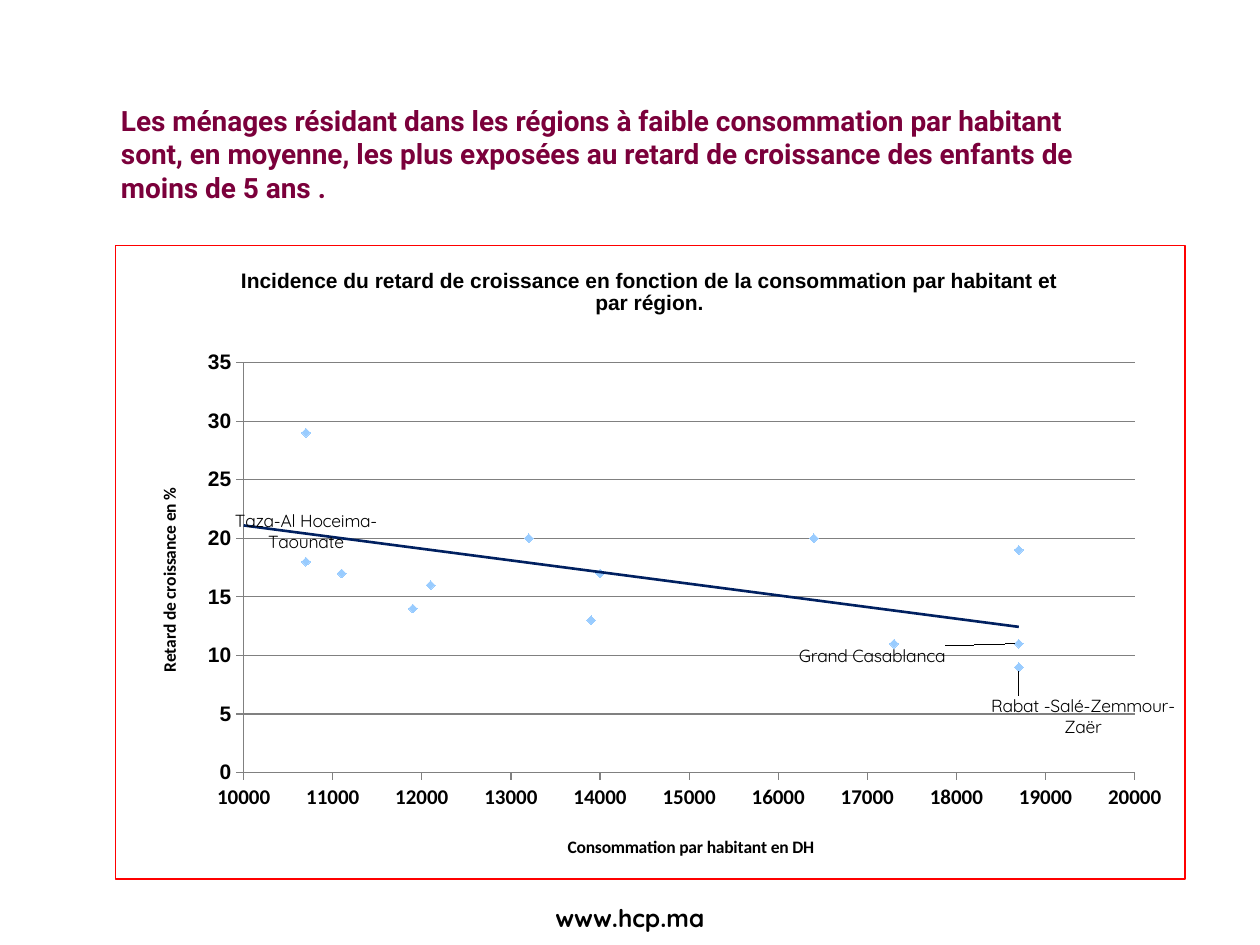
from lxml import etree
from pptx import Presentation
from pptx.chart.data import XyChartData
from pptx.dml.color import RGBColor
from pptx.enum.chart import XL_CHART_TYPE, XL_LABEL_POSITION, XL_MARKER_STYLE, XL_TICK_MARK
from pptx.enum.text import MSO_ANCHOR, PP_ALIGN
from pptx.oxml import parse_xml
from pptx.oxml.ns import qn
from pptx.util import Inches, Pt

SCATTER = XL_CHART_TYPE.XY_SCATTER
DIAMOND = XL_MARKER_STYLE.DIAMOND
OUTSIDE = XL_TICK_MARK.OUTSIDE
ABOVE, BELOW, LEFT = XL_LABEL_POSITION.ABOVE, XL_LABEL_POSITION.BELOW, XL_LABEL_POSITION.LEFT
CENTER, MIDDLE, PP_LEFT = PP_ALIGN.CENTER, MSO_ANCHOR.MIDDLE, PP_ALIGN.LEFT
NAMESPACES = ('xmlns:c="http://schemas.openxmlformats.org/drawingml/2006/chart" '
              'xmlns:a="http://schemas.openxmlformats.org/drawingml/2006/main"')
NO_LEADER_LINES = (
    f'<c:extLst {NAMESPACES}><c:ext uri="{{CE6537A1-D6FC-4f65-9D91-7224C49458BB}}" '
    'xmlns:c15="http://schemas.microsoft.com/office/drawing/2012/chart">'
    '<c15:showLeaderLines val="0"/></c:ext></c:extLst>')

CONSUMPTION = [9200, 10700, 10700, 11100, 11900, 12100, 13200,
               13900, 14000, 16400, 17300, 18700, 18700, 18700]
STUNTING = [25, 29, 18, 17, 14, 16, 20, 13, 17, 20, 11, 11, 19, 9]
# point index: (region, side, horizontal shift, vertical shift)
REGIONS = {
    2: ("Taza-Al Hoceima-Taounate", ABOVE, 0, 0),
    11: ("Grand Casablanca", LEFT, -0.06, 0.02),
    13: ("Rabat -Salé-Zemmour-Zaër", BELOW, 0.06, 0.03),
}


def color(value):
    return RGBColor.from_string(value)


def set_font(font, name, size, bold=False, fill="000000"):
    font.name, font.size, font.bold = name, Pt(size), bold
    font.color.rgb = color(fill)


def line_xml(fill, width):
    return (f'<a:ln w="{Pt(width)}"><a:solidFill><a:srgbClr val="{fill}"/>'
            '</a:solidFill></a:ln>')


def layout(left, top, width=None, height=None, edge=True):
    """Manual chart layout, as shares of the chart's size."""
    root = parse_xml(f"<c:layout {NAMESPACES}><c:manualLayout/></c:layout>")
    entries = [("layoutTarget", "inner")] if width else []
    if edge:
        entries += [("xMode", "edge"), ("yMode", "edge")]
    entries += [("x", left), ("y", top)]
    if width:
        entries += [("w", width), ("h", height)]
    for tag, value in entries:
        etree.SubElement(root[0], qn(f"c:{tag}")).set("val", str(value))
    return root


class SlideBuilder:
    def __init__(self, presentation):
        self.presentation = presentation
        self.slide = presentation.slides.add_slide(presentation.slide_layouts[5])

    def box(self, left, top, width, height):
        """Turn shares of the slide's size into lengths."""
        across, down = self.presentation.slide_width, self.presentation.slide_height
        return int(left * across), int(top * down), int(width * across), int(height * down)

    def title(self, text, *shares):
        shape = self.slide.shapes.title
        shape.left, shape.top, shape.width, shape.height = self.box(*shares)
        frame = shape.text_frame
        frame.text, frame.word_wrap, frame.vertical_anchor = text, True, MIDDLE
        paragraph = frame.paragraphs[0]
        paragraph.alignment = PP_LEFT
        set_font(paragraph.font, "Roboto", 16, True, "7B003B")

    def footer(self, text, *shares):
        frame = self.slide.shapes.add_textbox(*self.box(*shares)).text_frame
        frame.text, frame.word_wrap = text, True
        paragraph = frame.paragraphs[0]
        paragraph.alignment = CENTER
        set_font(paragraph.font, "Quicksand", 14, True)

    def scatter(self, *shares):
        data = XyChartData()
        series = data.add_series("Series 1")
        for point in zip(CONSUMPTION, STUNTING):
            series.add_data_point(*point)
        chart = self.slide.shapes.add_chart(SCATTER, *self.box(*shares), data).chart
        chart.has_legend = False
        set_font(chart.font, "Quicksand", 10)
        chart.plots[0].vary_by_categories = False
        return chart

    def chart_title(self, title, text, name, size, left, top):
        title.text_frame.text = text
        set_font(title.text_frame.paragraphs[0].font, name, size, True)
        element = title._element
        for old in element.findall(qn("c:layout")):
            element.remove(old)
        element.find(qn("c:tx")).addnext(layout(left, top))

    def axis(self, axis, name, low, high, step, grid):
        axis.minimum_scale, axis.maximum_scale, axis.major_unit = low, high, step
        axis.major_tick_mark = OUTSIDE
        axis.has_major_gridlines = grid
        lines = [axis.format.line] + ([axis.major_gridlines.format.line] if grid else [])
        for line in lines:
            line.color.rgb, line.width = color("808080"), Pt(0.75)
        axis.tick_labels.number_format = "General"
        axis.tick_labels.number_format_is_linked = False
        set_font(axis.tick_labels.font, name, 12, True)

    def region_label(self, series, index, text, side, right, down):
        label = series.points[index].data_label
        label.text_frame.text = text
        set_font(label.text_frame.paragraphs[0].font, "Quicksand", 10)
        label.position = side
        label._dLbl.find(qn("c:idx")).addnext(layout(right, down, edge=False))


def build():
    presentation = Presentation()
    presentation.slide_width, presentation.slide_height = Inches(10), Inches(7.5)
    builder = SlideBuilder(presentation)

    # Heading and web address
    builder.title("Les ménages résidant dans les régions à faible consommation par habitant "
                  "sont, en moyenne, les plus exposées au retard de croissance des enfants "
                  "de moins de 5 ans .", 0.086, 0.104, 0.82, 0.117)
    builder.footer("www.hcp.ma", 0.382, 0.949, 0.236, 0.044)

    # Chart frame and plot area
    chart = builder.scatter(0.091, 0.259, 0.85, 0.672)
    chart_element = chart._chartSpace.find(qn("c:chart"))
    chart_element.addnext(parse_xml(
        f'<c:spPr {NAMESPACES}><a:noFill/>{line_xml("FF0000", 0.75)}</c:spPr>'))
    plot_area = chart_element.find(qn("c:plotArea"))
    for old in plot_area.findall(qn("c:layout")):
        plot_area.remove(old)
    plot_area.insert(0, layout(0.12, 0.185, 0.833, 0.647))

    # Titles and axes
    horizontal, vertical = chart.category_axis, chart.value_axis
    builder.chart_title(
        chart.chart_title, "Incidence du retard de croissance en fonction de la "
        "consommation par habitant et par région.", "Arial", 12, 0.114, 0.029)
    chart.chart_title._element.find(qn("c:overlay")).set("val", "1")
    builder.axis(horizontal, "Calibri", 10000, 20000, 1000, False)
    builder.axis(vertical, "Arial", 0, 35, 5, True)
    builder.chart_title(horizontal.axis_title, "Consommation par habitant en DH",
                        "Calibri", 10, 0.42, 0.927)
    builder.chart_title(vertical.axis_title, "Retard de croissance en %",
                        "Calibri", 10, 0.037, 0.378)
    vertical.axis_title.text_frame._txBody.find(qn("a:bodyPr")).set("rot", "-5400000")

    # Regions as points, with names and a linear trend
    series = chart.plots[0].series[0]
    series.format.line.fill.background()
    marker = series.marker
    marker.style, marker.size = DIAMOND, 5
    marker.format.fill.solid()
    marker.format.fill.fore_color.rgb = color("99CCFF")
    marker.format.line.color.rgb = color("99CCFF")
    for index, region in REGIONS.items():
        builder.region_label(series, index, *region)
    labels = series._element.find(qn("c:dLbls"))
    labels.find(qn("c:showVal")).set("val", "0")
    labels.append(parse_xml(NO_LEADER_LINES))
    labels.addnext(parse_xml(
        f'<c:trendline {NAMESPACES}><c:spPr>{line_xml("002060", 1.5)}</c:spPr>'
        '<c:trendlineType val="linear"/><c:dispRSqr val="0"/><c:dispEq val="0"/>'
        '</c:trendline>'))

    presentation.save("out.pptx")


if __name__ == "__main__":
    build()
